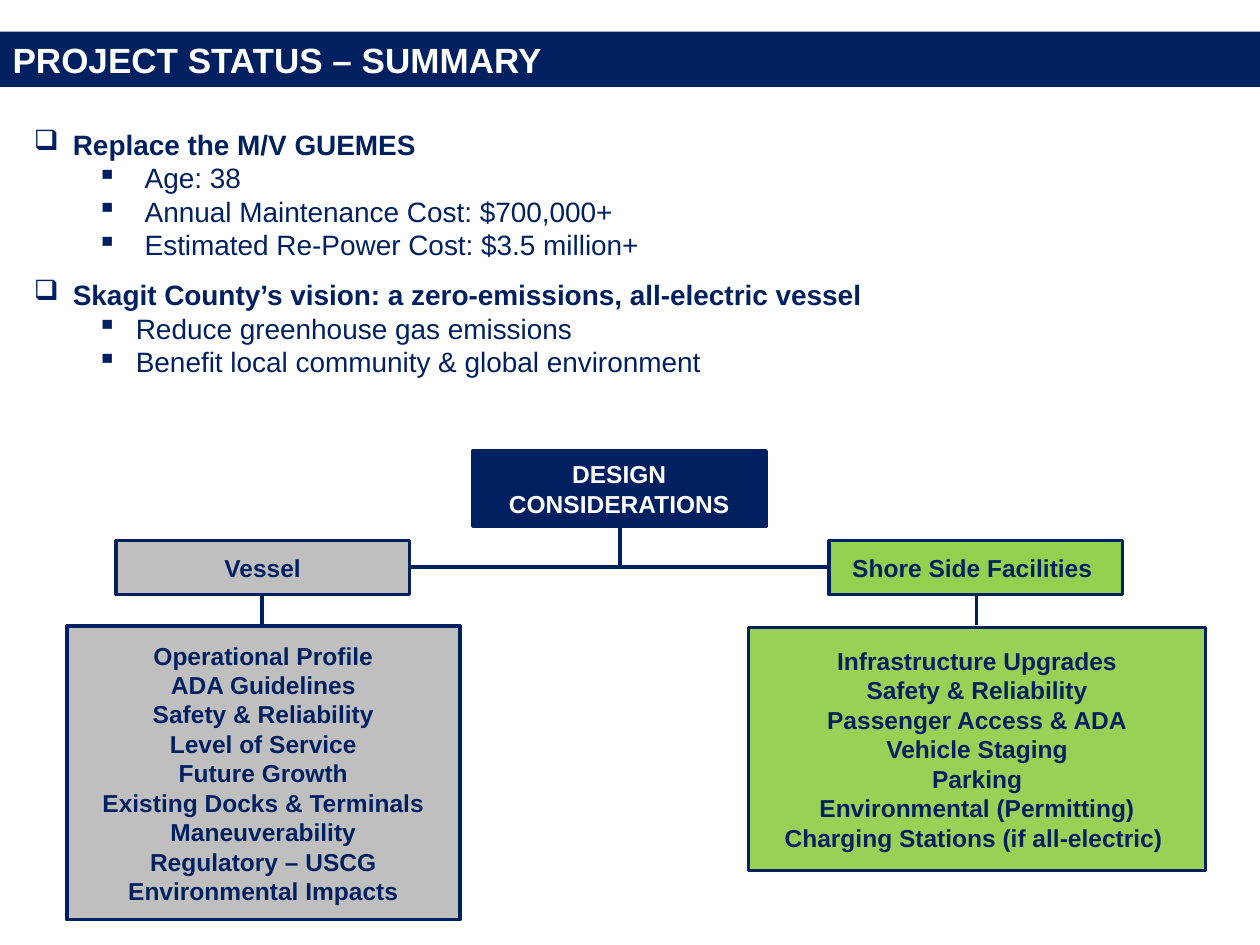
"""Build the project status summary slide."""
from lxml import etree
from pptx import Presentation
from pptx.dml.color import RGBColor
from pptx.enum.shapes import MSO_CONNECTOR, MSO_SHAPE
from pptx.enum.text import MSO_ANCHOR, PP_ALIGN
from pptx.oxml.ns import qn
from pptx.util import Inches, Pt

RECT = MSO_SHAPE.RECTANGLE
STRAIGHT = MSO_CONNECTOR.STRAIGHT
MIDDLE = MSO_ANCHOR.MIDDLE
LEFT, CENTER = PP_ALIGN.LEFT, PP_ALIGN.CENTER
NAVY, WHITE, GRAY = "002060", "FFFFFF", "BFBFBF"
GREEN, LIGHT_GREEN = "92D050", "97D256"

TITLE = "PROJECT STATUS – SUMMARY"
GOALS = [
    ("Replace the M/V GUEMES", 0.88, 0.38, [
        "Age: 38",
        "Annual Maintenance Cost: $700,000+",
        "Estimated Re-Power Cost: $3.5 million+",
    ]),
    ("Skagit County’s vision: a zero-emissions, all-electric vessel", 0.81, 0.31, [
        "Reduce greenhouse gas emissions",
        "Benefit local community & global environment",
    ]),
]
VESSEL_TOPICS = [
    "Operational Profile", "ADA Guidelines", "Safety & Reliability",
    "Level of Service", "Future Growth", "Existing Docks & Terminals",
    "Maneuverability", "Regulatory – USCG", "Environmental Impacts",
]
SHORE_TOPICS = [
    "Infrastructure Upgrades", "Safety & Reliability", "Passenger Access & ADA",
    "Vehicle Staging", "Parking", "Environmental (Permitting)",
    "Charging Stations (if all-electric) ",
]
HEAD_W, BRANCH_TOP, BRANCH_H = 2.33, 4.29, 0.43
BOXES = [
    (["DESIGN CONSIDERATIONS"], (3.75, 3.58, HEAD_W, 0.6), NAVY, WHITE),
    (["Shore Side Facilities "], (6.58, BRANCH_TOP, HEAD_W, BRANCH_H), GREEN, NAVY),
    (["Vessel"], (0.92, BRANCH_TOP, HEAD_W, BRANCH_H), GRAY, NAVY),
    (SHORE_TOPICS, (5.94, 4.98, 3.63, 1.93), LIGHT_GREEN, NAVY),
    (VESSEL_TOPICS, (0.53, 4.97, 3.12, 2.33), GRAY, NAVY),
]
BUS_Y, TRUNK_X, BRANCH_BOTTOM, TOPICS_TOP = 4.5, 4.92, 4.71, 4.96
LINKS = [(3, BUS_Y, 6.75, BUS_Y), (TRUNK_X, 4.18, TRUNK_X, BUS_Y)] + [
    (x, TOPICS_TOP, x, BRANCH_BOTTOM) for x in (7.75, 2.08)
]


def rgb(color):
    return RGBColor.from_string(color)


def inches(values):
    return [Inches(value) for value in values]


def place(shape, box):
    shape.left, shape.top, shape.width, shape.height = inches(box)


def write(paragraph, text, size, color, bold=True, align=CENTER):
    paragraph.alignment = align
    run = paragraph.add_run()
    run.text = text
    run.font.name = "Arial"
    run.font.size = Pt(size)
    run.font.bold = bold
    run.font.color.rgb = rgb(color)


def next_paragraph(frame, first):
    return frame.paragraphs[0] if first else frame.add_paragraph()


def add_bullet(paragraph, mark, margin, hanging):
    props = paragraph._p.get_or_add_pPr()
    props.set("marL", str(Inches(margin)))
    props.set("indent", str(-Inches(hanging)))
    etree.SubElement(props, qn("a:buChar")).set("char", mark)


def add_link(slide, ends):
    link = slide.shapes.add_connector(STRAIGHT, *inches(ends))
    link.line.color.rgb = rgb(NAVY)
    link.line.width = Pt(2)
    etree.SubElement(link._element.spPr, qn("a:effectLst"))


def add_box(slide, lines, box, fill, color):
    shape = slide.shapes.add_shape(RECT, *inches(box))
    shape.shadow.inherit = False
    shape.fill.solid()
    shape.fill.fore_color.rgb = rgb(fill)
    shape.line.color.rgb = rgb(NAVY)
    shape.line.width = Pt(2)
    frame = shape.text_frame
    frame.word_wrap = True
    frame.vertical_anchor = MIDDLE
    for index, line in enumerate(lines):
        write(next_paragraph(frame, index == 0), line, 14, color)


def add_goals(slide):
    frame = slide.shapes.add_textbox(*inches((0.17, 0.96, 9.58, 2.12))).text_frame
    frame.word_wrap = True
    for index, (goal, margin, hanging, details) in enumerate(GOALS):
        heading = next_paragraph(frame, index == 0)
        heading.space_before = Pt(9.2 if index else 0)
        write(heading, goal, 16, NAVY, align=LEFT)
        add_bullet(heading, "❑", 0.31, 0.31)
        for detail in details:
            paragraph = frame.add_paragraph()
            paragraph.level = 1
            write(paragraph, detail, 16, NAVY, bold=False, align=LEFT)
            add_bullet(paragraph, "▪", margin, hanging)


deck = Presentation()
deck.slide_width, deck.slide_height = Inches(10), Inches(7.5)
slide = deck.slides.add_slide(deck.slide_layouts[5])

banner = slide.shapes.title
place(banner, (0, 0.25, 10, 0.44))
banner.fill.solid()
banner.fill.fore_color.rgb = rgb(NAVY)
banner.text_frame.vertical_anchor = MIDDLE
write(banner.text_frame.paragraphs[0], TITLE, 20, WHITE, align=LEFT)

add_goals(slide)
for ends in LINKS:
    add_link(slide, ends)
for lines, box, fill, color in BOXES:
    add_box(slide, lines, box, fill, color)

deck.save("out.pptx")
